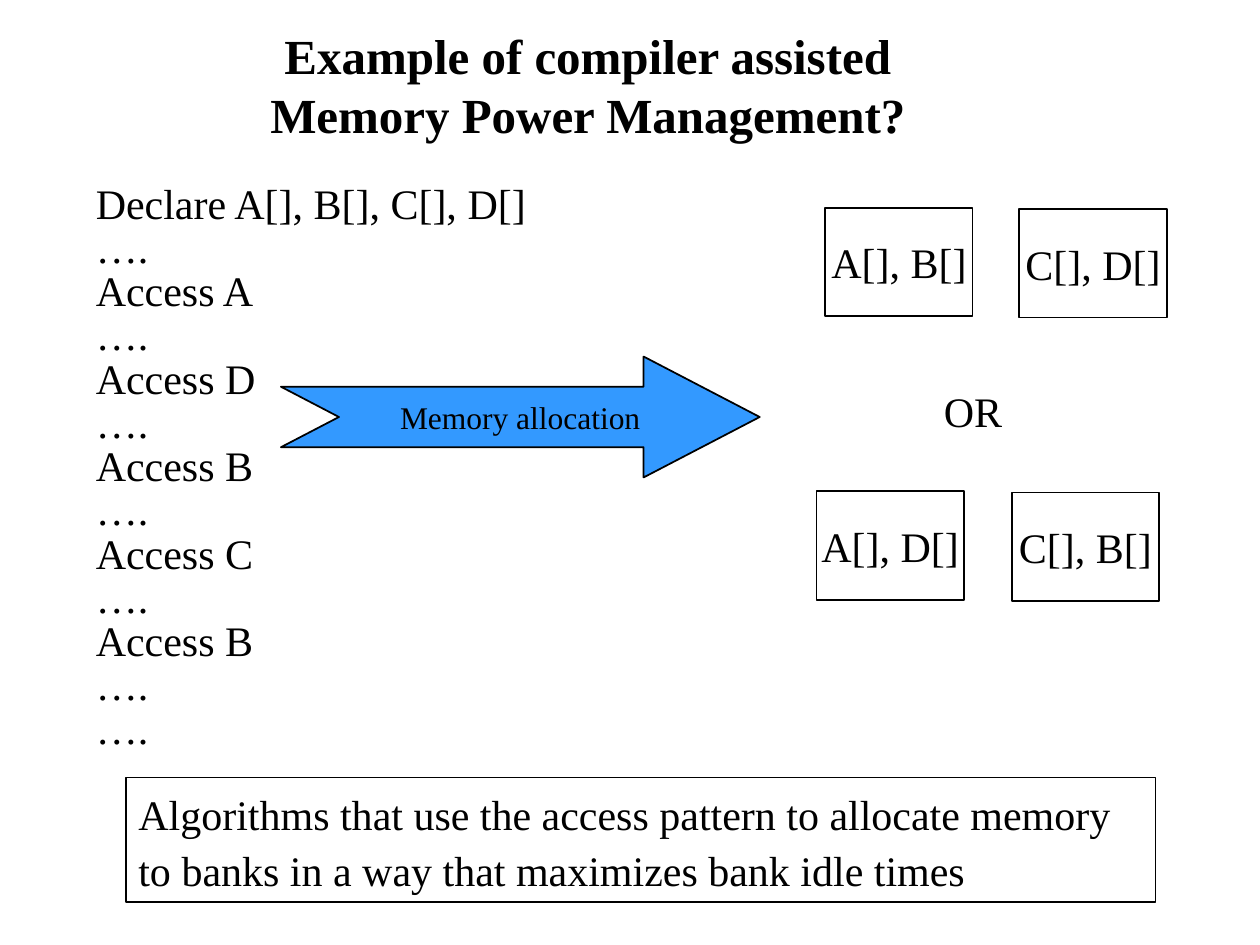
from dataclasses import dataclass
from typing import Any, NamedTuple

from lxml import etree
from pptx import Presentation
from pptx.dml.color import RGBColor
from pptx.enum.shapes import MSO_SHAPE
from pptx.enum.text import MSO_ANCHOR, MSO_AUTO_SIZE, PP_ALIGN
from pptx.oxml.ns import qn
from pptx.util import Inches, Pt

RECT, ARROW = MSO_SHAPE.RECTANGLE, MSO_SHAPE.NOTCHED_RIGHT_ARROW
TOP, MIDDLE = MSO_ANCHOR.TOP, MSO_ANCHOR.MIDDLE
LEFT, CENTER = PP_ALIGN.LEFT, PP_ALIGN.CENTER
FIXED = MSO_AUTO_SIZE.NONE
WIDTH, HEIGHT = Inches(10), Inches(7.5)
COLS, ROWS = 100, 75


@dataclass(frozen=True)
class Theme:
    font: str = "Times New Roman"
    ink: RGBColor = RGBColor(0, 0, 0)
    paper: RGBColor = RGBColor(255, 255, 255)
    arrow: RGBColor = RGBColor(0x33, 0x99, 0xFF)
    title: Pt = Pt(28)
    body: Pt = Pt(24)
    label: Pt = Pt(18)
    pitch: Pt = Pt(25)


class Area(NamedTuple):
    col: float
    row: float
    wide: float
    high: float


class Bank(NamedTuple):
    text: str
    col: float
    row: float


THEME = Theme()
TIGHT, LOOSE = (0.09, 0.04), (0.1, 0.05)
TITLE = "Example of compiler assisted Memory Power Management?"
NOTE = (
    "Algorithms that use the access pattern to allocate memory "
    "to banks in a way that maximizes bank idle times"
)
GAP = "…."
TRACE = ["Declare A[], B[], C[], D[]", GAP]
for name in "ADBCB":
    TRACE += [f"Access {name}", GAP]
TRACE.append(GAP)
BANKS = [
    Bank("A[], B[]", 65.5, 16.5),
    Bank("C[], D[]", 80.9, 16.6),
    Bank("A[], D[]", 64.8, 39),
    Bank("C[], B[]", 80.3, 39.1),
]


def assign(target: Any, values: dict[str, Any]) -> None:
    for key, value in values.items():
        setattr(target, key, value)


def place(shape: Any, area: Area) -> None:
    assign(shape, {
        "left": round(WIDTH * area.col / COLS),
        "top": round(HEIGHT * area.row / ROWS),
        "width": round(WIDTH * area.wide / COLS),
        "height": round(HEIGHT * area.high / ROWS),
    })


def write(shape: Any, lines: list[str], size: Pt, align: Any = CENTER,
          anchor: Any = MIDDLE, wrap: bool = False, bold: bool = False,
          pad: tuple[float, float] = TIGHT, pitch: Any = 1.0) -> None:
    frame = shape.text_frame
    side, edge = map(Inches, pad)
    frame.text = "\n".join(lines)
    assign(frame, {
        "auto_size": FIXED, "word_wrap": wrap, "vertical_anchor": anchor,
        "margin_left": side, "margin_right": side,
        "margin_top": edge, "margin_bottom": edge,
    })
    for para in frame.paragraphs:
        assign(para, {"alignment": align, "line_spacing": pitch,
                      "space_before": Pt(0)})
        assign(para.font, {"name": THEME.font, "size": size, "bold": bold})
        para.font.color.rgb = THEME.ink


def draw(slide: Any, kind: Any, area: Area, fill: RGBColor | None = None,
         line: float = 1) -> Any:
    shape = slide.shapes.add_shape(kind, 0, 0, 0, 0)
    place(shape, area)
    shape.shadow.inherit = False
    if fill is None:
        shape.fill.background()
    else:
        shape.fill.solid()
        shape.fill.fore_color.rgb = fill
    shape.line.color.rgb = THEME.ink
    shape.line.width = Pt(line)
    return shape


def plain(shape: Any) -> None:
    for para in shape.text_frame.paragraphs:
        props = para._p.get_or_add_pPr()
        props.set("marL", "0")
        props.set("indent", "0")
        mark = etree.Element(qn("a:buNone"))
        props.insert_element_before(mark, "a:tabLst", "a:defRPr", "a:extLst")


def main() -> None:
    deck = Presentation()
    assign(deck, {"slide_width": WIDTH, "slide_height": HEIGHT})
    slide = deck.slides.add_slide(deck.slide_layouts[1])

    title, trace = slide.placeholders
    place(title, Area(15, 1.7, 63.3, 10))
    title.fill.solid()
    title.fill.fore_color.rgb = THEME.paper
    write(title, [TITLE], THEME.title, wrap=True, bold=True, pad=LOOSE)

    place(trace, Area(6.7, 14.2, 36.3, 46.5))
    write(trace, TRACE, THEME.body, LEFT, TOP, pitch=THEME.pitch)
    plain(trace)

    arrow = draw(slide, ARROW, Area(22.3, 28.3, 38, 9.6), THEME.arrow)
    arrow.adjustments[0] = 0.5
    arrow.adjustments[1] = 0.96
    write(arrow, ["Memory allocation"], THEME.label)

    note = draw(slide, RECT, Area(10, 61.7, 81.7, 9.9), line=0.75)
    write(note, [NOTE], THEME.body, LEFT, TOP, wrap=True, pad=LOOSE, pitch=1.1)

    for bank in BANKS:
        box = draw(slide, RECT, Area(bank.col, bank.row, 11.7, 8.6))
        write(box, [bank.text], THEME.body)

    choice = slide.shapes.add_textbox(0, 0, 0, 0)
    place(choice, Area(74, 30.2, 6.5, 4.9))
    write(choice, ["OR"], THEME.body, LEFT, TOP)

    deck.save("out.pptx")


if __name__ == "__main__":
    main()
